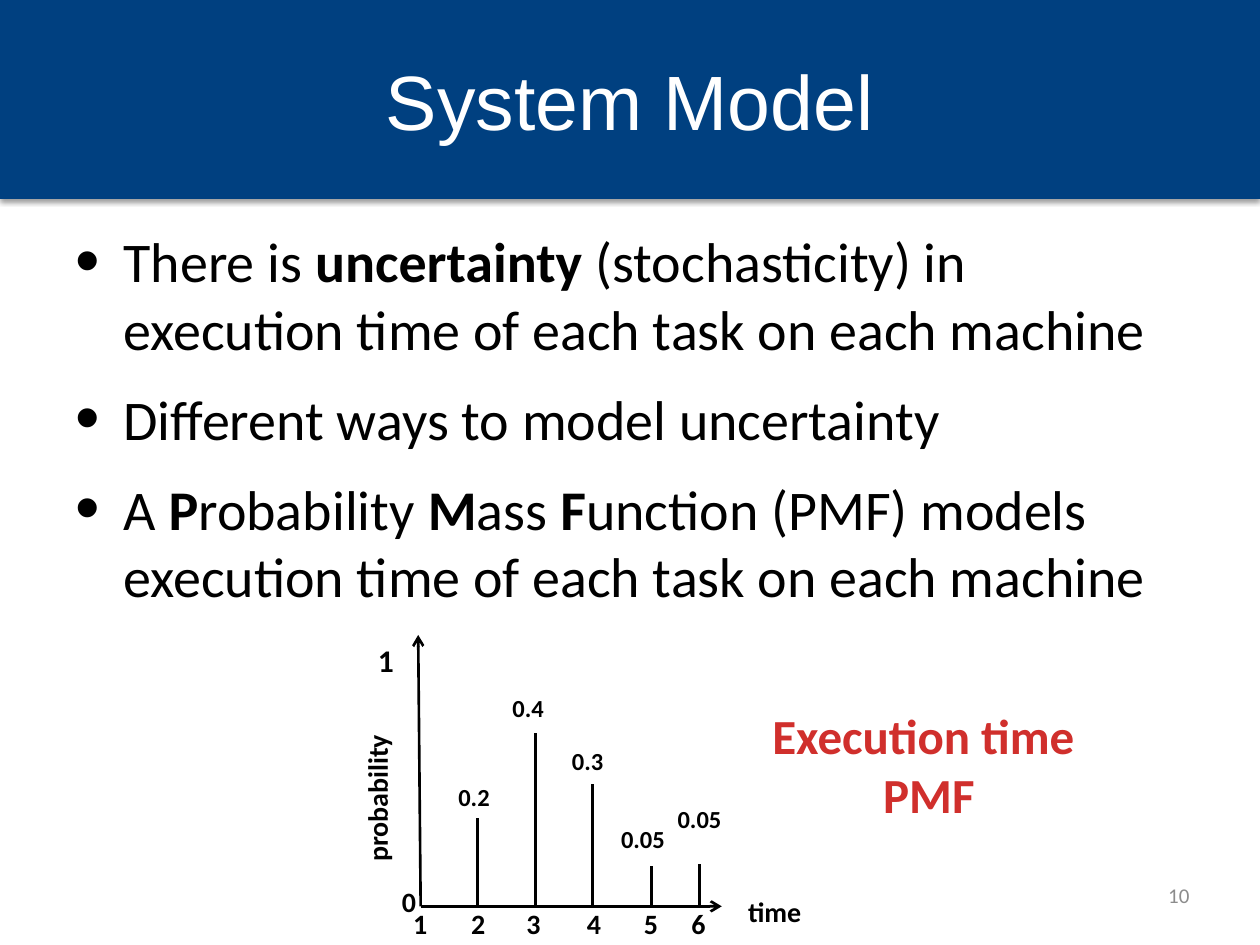
from lxml import etree
from pptx import Presentation
from pptx import util as u
from pptx.dml.color import RGBColor
from pptx.enum import shapes, text
from pptx.oxml import ns

NAVY = RGBColor(0x00, 0x40, 0x80)
BLACK = RGBColor(0x00, 0x00, 0x00)
WHITE = RGBColor(0xFF, 0xFF, 0xFF)
GRAY = RGBColor(0x8C, 0x8C, 0x8C)
RED = RGBColor(0xD0, 0x2F, 0x2C)
ALIGN = text.PP_ALIGN
MID = text.MSO_ANCHOR.MIDDLE


def put(node, tag, **attrs):
    return etree.SubElement(node, ns.qn(tag), attrs)


class Deck:
    font = "Calibri"
    width = u.Pt(1.5)

    def __init__(self):
        self.prs = Presentation()
        self.prs.slide_width, self.prs.slide_height = u.Cm(25.4), u.Cm(19.05)
        self.slide = self.prs.slides.add_slide(self.prs.slide_layouts[6])
        self.host = self.slide.shapes

    def group(self):
        self.host = self.slide.shapes.add_group_shape().shapes

    def ungroup(self):
        self.host = self.slide.shapes

    def style(self, run, size, color=BLACK, bold=False, name=None):
        look = {"size": u.Pt(size), "bold": bold, "name": name or self.font}
        for key, val in look.items():
            setattr(run.font, key, val)
        run.font.color.rgb = color

    def band(self, box, color):
        rect = self.host.add_shape(shapes.MSO_SHAPE.RECTANGLE, *map(u.Cm, box))
        rect.fill.solid()
        rect.fill.fore_color.rgb = color
        rect.line.fill.background()
        rect.shadow.inherit = False
        shade = put(rect.element.spPr.find(ns.qn("a:effectLst")), "a:outerShdw",
                    blurRad=str(u.Pt(3.1)), dist=str(u.Pt(1.6)),
                    dir="5400000", rotWithShape="0")
        put(put(shade, "a:srgbClr", val="000000"), "a:alpha", val="38000")

    def frame(self, box, turn=0, **look):
        area = self.host.add_textbox(*map(u.Cm, box))
        area.rotation = turn
        for key, val in look.items():
            setattr(area.text_frame, key, val)
        return area.text_frame

    def label(self, words, box, size, align=ALIGN.LEFT, turn=0, wrap=False,
              anchor=text.MSO_ANCHOR.TOP, **look):
        fit = text.MSO_AUTO_SIZE.NONE if wrap else text.MSO_AUTO_SIZE.SHAPE_TO_FIT_TEXT
        para = self.frame(box, turn, word_wrap=wrap, auto_size=fit,
                          vertical_anchor=anchor).paragraphs[0]
        para.text = words
        para.alignment = align
        for run in para.runs:
            self.style(run, size, **look)

    def bullets(self, items, box, size):
        body = self.frame(box, word_wrap=True)
        for num, parts in enumerate(items):
            para = body.add_paragraph() if num else body.paragraphs[0]
            para.space_before = u.Pt(13 if num else 2)
            props = para._p.get_or_add_pPr()
            props.set("marL", str(u.Cm(0.97)))
            props.set("indent", str(u.Cm(-0.97)))
            put(props, "a:buSzPct", val="125000")
            put(props, "a:buFont", typeface="Arial")
            put(props, "a:buChar", char="•")
            for words, bold in parts:
                run = para.add_run()
                run.text = words
                self.style(run, size, bold=bold)

    def line(self, start, end, arrow=False):
        rule = self.host.add_connector(shapes.MSO_CONNECTOR.STRAIGHT,
                                       *map(u.Cm, start + end))
        rule.line.color.rgb = BLACK
        rule.line.width = self.width
        if arrow:
            put(rule.line._get_or_add_ln(), "a:tailEnd", type="arrow")
        put(rule.element.spPr, "a:effectLst")

    def save(self):
        self.prs.save("out.pptx")


ITEMS = [
    [("There is ", False), ("uncertainty", True),
     (" (stochasticity) in execution time of each task on each machine", False)],
    [("Different ways to model uncertainty", False)],
    [("A ", False), ("P", True), ("robability ", False), ("M", True),
     ("ass ", False), ("F", True),
     ("unction (PMF) models execution time of each task on each machine", False)],
]
BASE = 18.27
STEMS = [
    (9.63, 16.48, "0.2", (8.99, 15.65, 1.14)),
    (10.8, 14.78, "0.4", (10.08, 13.84, 1.14)),
    (11.94, 15.8, "0.3", (11.28, 14.91, 1.14)),
    (13.13, 17.45, "0.05", (12.27, 16.48, 1.45)),
    (14.1, 17.42, "0.05", (13.41, 16.08, 1.4)),
]
TICKS = [8.08, 9.25, 10.36, 11.58, 12.73, 13.69]
NAMES = [
    ("probability", (6.05, 15.6, 3.1, 0.94), 16, 270),
    ("time", (14.83, 17.91, 1.6, 0.94), 16, 0),
    ("1", (7.37, 12.8, 0.84, 1.02), 18, 0),
    ("0", (7.85, 17.7, 0.81, 0.94), 16, 0),
]


def main():
    deck = Deck()
    deck.band((0, 0, 25.4, 4.01), NAVY)
    deck.label("System Model", (1.27, 0.43, 22.86, 3.18), 44, ALIGN.CENTER,
               wrap=True, anchor=MID, color=WHITE, name="Arial")
    deck.bullets(ITEMS, (1.27, 4.45, 22.86, 12.57), 32)
    deck.label("10", (18.31, 17.53, 5.92, 1.02), 12, ALIGN.RIGHT,
               wrap=True, anchor=MID, color=GRAY)
    deck.group()
    for end in ((14.55, BASE), (8.43, 12.8)):
        deck.line((8.48, BASE), end, arrow=True)
    for left, top, odds, spot in STEMS:
        deck.line((left, BASE), (left, top))
        deck.label(odds, spot + (0.86,), 14, bold=True)
    for num, left in enumerate(TICKS, 1):
        deck.label(str(num), (left, 18.16, 0.81, 0.94), 16, bold=True)
    for words, box, size, turn in NAMES:
        deck.label(words, box, size, turn=turn, bold=True)
    deck.ungroup()
    deck.label("Execution time \vPMF", (15.27, 14.1, 6.91, 2.64), 28,
               ALIGN.CENTER, color=RED, bold=True)
    deck.save()


if __name__ == "__main__":
    main()
